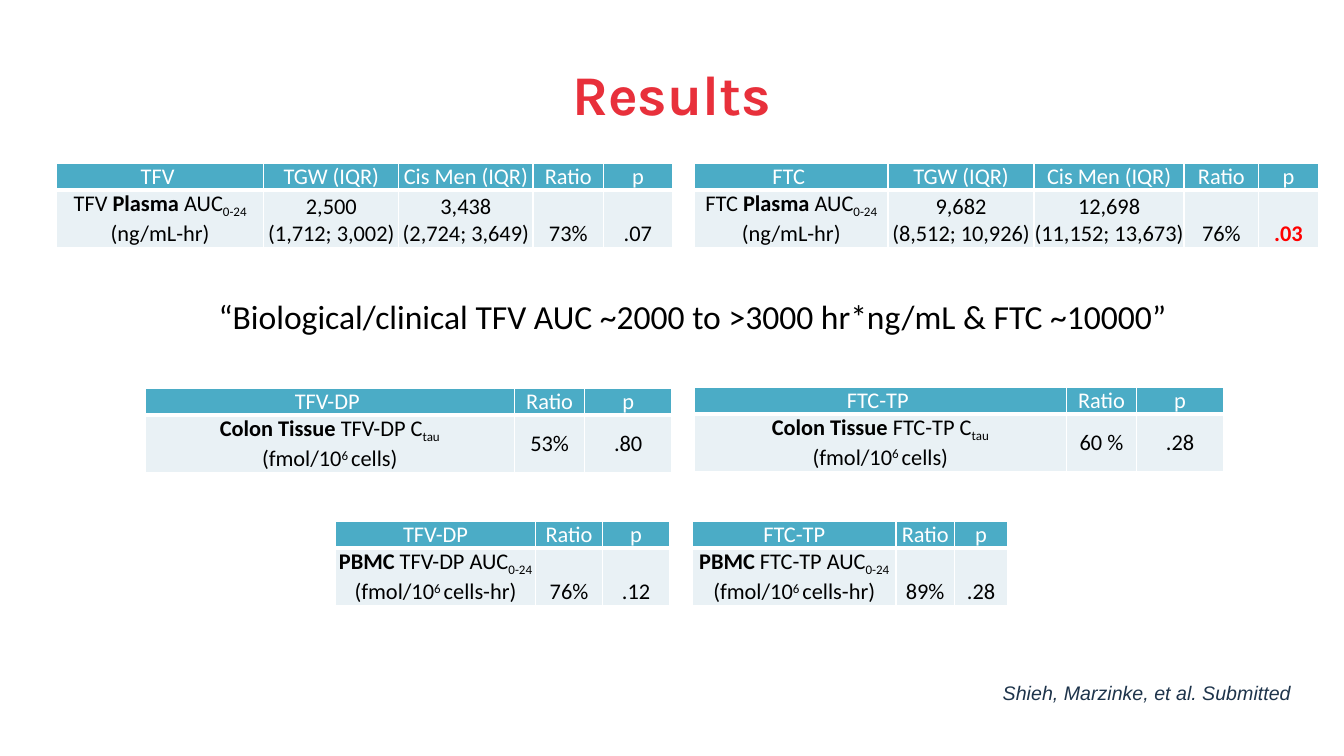
import pptx
import pptx.util
import pptx.dml.color
import pptx.enum.text
import pptx.oxml
import pptx.oxml.ns
from pptx.util import Cm

COLORS = {"title": "E8303B", "header": "4BACC6", "body": "E9F1F5", "white": "FFFFFF",
          "black": "000000", "alert": "FF0000", "citation": "1E344B"}
ANCHOR = pptx.enum.text.MSO_ANCHOR
ALIGN = pptx.enum.text.PP_ALIGN
BASELINES = {"sub": "-25000", "sup": "30000"}


def rgb(name):
    """Return the named colour."""
    return pptx.dml.color.RGBColor.from_string(COLORS[name])


def style_font(font, name, size, color, bold=False, italic=False):
    """Set the face, size, colour and weight of a font."""
    font.name, font.size = name, pptx.util.Pt(size)
    font.bold, font.italic = bold, italic
    font.color.rgb = rgb(color)


def add_text(s, box, text, align, font, wrap=True, anchor=ANCHOR.TOP):
    """Add a one-paragraph text box."""
    tf = s.shapes.add_textbox(*map(Cm, box)).text_frame
    tf.word_wrap, tf.vertical_anchor = wrap, anchor
    p = tf.paragraphs[0]
    p.text, p.alignment = text, align
    style_font(p.font, *font)


def add_run(p, text, style=None):
    """Add a run that is plain, bold, alert, sub or sup."""
    r = p.add_run()
    r.text = text
    if style in BASELINES:
        r.font._element.set("baseline", BASELINES[style])
    elif style:
        r.font.bold = True
        if style == "alert":
            r.font.color.rgb = rgb("alert")


def add_borders(cell, bottom):
    """Draw white borders around a cell."""
    tcPr = cell._tc.get_or_add_tcPr()
    for side, width in (("L", 1), ("R", 1), ("T", 1), ("B", bottom)):
        tcPr.append(pptx.oxml.parse_xml(
            f'<a:ln{side} {pptx.oxml.ns.nsdecls("a")} w="{pptx.util.Pt(width)}"><a:solidFill>'
            f'<a:srgbClr val="{COLORS["white"]}"/></a:solidFill></a:ln{side}>'))


def fill_cell(cell, lines, header, anchor):
    """Write the lines of runs into a cell and colour it."""
    cell.margin_left = cell.margin_right = cell.margin_top = cell.margin_bottom = 0
    cell.vertical_anchor = anchor
    add_borders(cell, 3 if header else 1)
    cell.fill.solid()
    cell.fill.fore_color.rgb = rgb("header" if header else "body")
    tf = cell.text_frame
    for i, runs in enumerate(lines):
        p = tf.add_paragraph() if i else tf.paragraphs[0]
        p.alignment = ALIGN.CENTER
        style_font(p.font, "Calibri", 16, "white" if header else "black")
        for run in runs:
            add_run(p, *run)


def add_result_table(s, left, top, widths, headers, values, anchor=ANCHOR.BOTTOM):
    """Add a table with a header row and one row of results."""
    heights = (0.53, 0.64)
    shape = s.shapes.add_table(2, len(widths), Cm(left), Cm(top), Cm(sum(widths)), Cm(sum(heights)))
    table = shape.table
    table.first_row = table.horz_banding = False
    for row, height in zip(table.rows, heights):
        row.height = Cm(height)
    for c, width in enumerate(widths):
        table.columns[c].width = Cm(width)
        fill_cell(table.cell(0, c), [[(headers[c],)]], True, anchor)
        fill_cell(table.cell(1, c), values[c], False, anchor)


def plain(*lines):
    """Return lines of one plain run each."""
    return [[(line,)] for line in lines]


def plasma(drug):
    """Return the plasma measure of a drug."""
    return [[(f"{drug} ",), ("Plasma ", "bold"), ("AUC",), ("0-24", "sub")], [("(ng/mL-hr)",)]]


def per_cells(first_line, unit):
    """Return a measure given per million cells."""
    return [first_line, [("(fmol/10",), ("6 ", "sup"), (unit,)]]


def colon(drug):
    """Return the colon tissue measure of a drug."""
    return per_cells([("Colon Tissue ", "bold"), (f"{drug} C",), ("tau", "sub")], "cells)")


def pbmc(drug):
    """Return the PBMC measure of a drug."""
    return per_cells([("PBMC", "bold"), (f" {drug} AUC",), ("0-24", "sub")], "cells-hr)")


def main():
    """Build the results slide."""
    prs = pptx.Presentation()
    prs.slide_width, prs.slide_height = Cm(33.87), Cm(19.05)
    s = prs.slides.add_slide(prs.slide_layouts[6])
    add_text(s, (2.08, 0.76, 29.69, 3.18), "Results", ALIGN.CENTER,
             ("Karla", 40, "title", True), anchor=ANCHOR.MIDDLE)

    short = ["Ratio", "p"]
    full = ["TGW (IQR)", "Cis Men (IQR)"] + short
    add_result_table(s, 1.42, 4.11, (5.23, 3.4, 3.38, 1.78, 1.73), ["TFV "] + full,
                     [plasma("TFV"), plain("2,500", "(1,712; 3,002)"),
                      plain("3,438", "(2,724; 3,649)"), plain("73%"), plain(".07")])
    add_result_table(s, 17.5, 4.11, (4.88, 3.68, 3.78, 1.88, 1.5), ["FTC "] + full,
                     [plasma("FTC"), plain("9,682", "(8,512; 10,926)"),
                      plain("12,698", "(11,152; 13,673)"), plain("76%"), [[(".03", "alert")]]])
    add_text(s, (23.95, 17.04, 9.91, 0.86), "Shieh, Marzinke, et al. Submitted", ALIGN.CENTER,
             ("Arial", 14, "citation", False, True))
    add_result_table(s, 3.66, 9.78, (9.3, 1.78, 2.18), ["TFV-DP "] + short,
                     [colon("TFV-DP"), plain("53%"), plain(".80")], ANCHOR.MIDDLE)
    add_result_table(s, 17.5, 9.75, (9.37, 1.78, 2.18), ["FTC-TP "] + short,
                     [colon("FTC-TP"), plain("60 %"), plain(".28")], ANCHOR.MIDDLE)
    add_text(s, (5.26, 7.34, 24.59, 1.27),
             "“Biological/clinical TFV AUC ~2000 to >3000 hr*ng/mL & FTC ~10000”",
             ALIGN.LEFT, ("Calibri", 24, "black"), wrap=False)
    add_result_table(s, 8.46, 13.13, (5.03, 1.7, 1.68), ["TFV-DP"] + short,
                     [pbmc("TFV-DP"), plain("76%"), plain(".12")])
    add_result_table(s, 17.45, 13.13, (5.13, 1.47, 1.35), ["FTC-TP"] + short,
                     [pbmc("FTC-TP"), plain("89%"), plain(".28")])
    prs.save("out.pptx")


if __name__ == "__main__":
    main()
